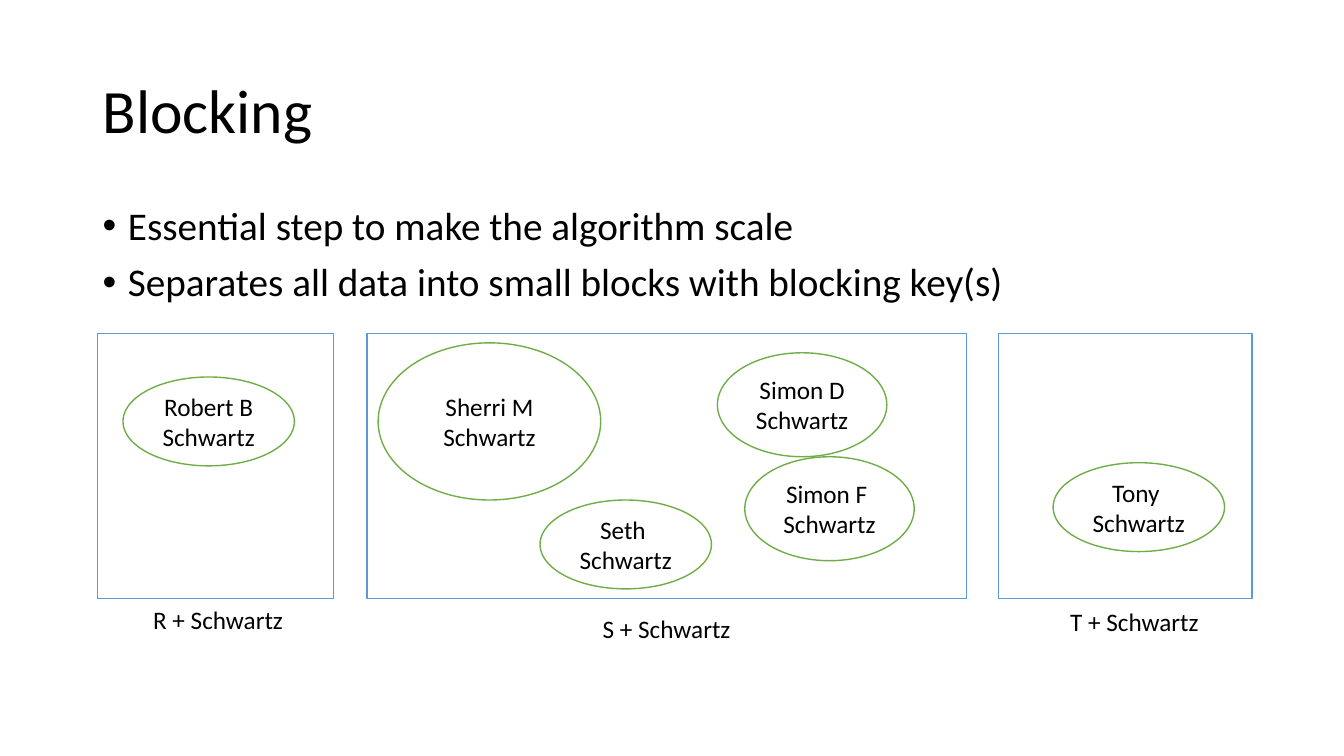
from lxml import etree
from pptx import Presentation
from pptx import util as u
from pptx.dml.color import RGBColor
from pptx.enum import shapes, text
from pptx.oxml.ns import qn

BLACK, WHITE, BLUE, GREEN = "000000", "FFFFFF", "5B9BD5", "70AD47"
BLOCK_TOP, BLOCK_HEIGHT = 8.41, 6.68
SMALL, MEDIUM, LARGE = (4.32, 2.24), (4.27, 2.62), (5.61, 3.96)

# left, width, label text, label left, label top
BLOCKS = [
    (2.46, 5.94, "R + Schwartz", 3.61, 15.11),
    (9.25, 15.11, "S + Schwartz", 14.94, 15.34),
    (25.17, 6.38, "T + Schwartz", 26.72, 15.16),
]

# left, top, size, lines
RECORDS = [
    (9.53, 8.64, LARGE, ["Sherri M", "Schwartz"]),
    (18.08, 8.89, MEDIUM, ["Simon D Schwartz"]),
    (13.61, 12.6, SMALL, ["Seth ", "Schwartz"]),
    (18.77, 11.51, MEDIUM, ["Simon F ", "Schwartz"]),
    (3.1, 9.5, SMALL, ["Robert B Schwartz"]),
    (26.54, 11.66, SMALL, ["Tony ", "Schwartz"]),
]


def colour(value):
    return RGBColor.from_string(value)


def add_bullet(para):
    properties = para._p.get_or_add_pPr()
    properties.set("marL", str(u.Cm(0.635)))
    properties.set("indent", str(-u.Cm(0.635)))
    etree.SubElement(properties, qn("a:buFont"), typeface="Arial")
    etree.SubElement(properties, qn("a:buChar"), char="•")


def write(box, lines, size=18, align=text.PP_ALIGN.LEFT,
          anchor=text.MSO_ANCHOR.TOP, spacing=1.0, before=0, bullet=False):
    """Fill a shape with one paragraph for each line."""
    frame = box.text_frame
    frame.word_wrap = True
    frame.vertical_anchor = anchor
    for index, line in enumerate(lines):
        para = frame.paragraphs[0] if index == 0 else frame.add_paragraph()
        para.alignment = align
        para.line_spacing = spacing
        para.space_before = u.Pt(before)
        if bullet:
            add_bullet(para)
        span = para.add_run()
        span.text = line
        span.font.name = "Calibri"
        span.font.size = u.Pt(size)
        span.font.color.rgb = colour(BLACK)


def add_text(slide, left, top, width, height, lines, **style):
    box = slide.shapes.add_textbox(u.Cm(left), u.Cm(top), u.Cm(width), u.Cm(height))
    write(box, lines, **style)


def add_outline(slide, kind, left, top, width, height, line):
    shape = slide.shapes.add_shape(
        kind, u.Cm(left), u.Cm(top), u.Cm(width), u.Cm(height))
    shape.shadow.inherit = False
    shape.fill.solid()
    shape.fill.fore_color.rgb = colour(WHITE)
    shape.line.color.rgb = colour(line)
    shape.line.width = u.Pt(1)
    return shape


def add_block(slide, left, width, label, label_left, label_top):
    add_outline(slide, shapes.MSO_SHAPE.RECTANGLE,
                left, BLOCK_TOP, width, BLOCK_HEIGHT, BLUE)
    add_text(slide, label_left, label_top, 4.72, 1.02, [label])


def add_record(slide, left, top, size, lines):
    oval = add_outline(slide, shapes.MSO_SHAPE.OVAL, left, top, *size, GREEN)
    write(oval, lines, align=text.PP_ALIGN.CENTER, anchor=text.MSO_ANCHOR.MIDDLE)


def main():
    deck = Presentation()
    deck.slide_width, deck.slide_height = u.Cm(33.87), u.Cm(19.05)
    slide = deck.slides.add_slide(deck.slide_layouts[6])

    add_text(slide, 2.34, 1.02, 29.21, 3.68, ["Blocking"],
             size=44, anchor=text.MSO_ANCHOR.MIDDLE, spacing=0.9)
    add_text(slide, 2.34, 5.08, 29.21, 12.09,
             ["Essential step to make the algorithm scale",
              "Separates all data into small blocks with blocking key(s)"],
             size=28, spacing=0.9, before=10, bullet=True)
    for block in BLOCKS:
        add_block(slide, *block)
    for record in RECORDS:
        add_record(slide, *record)

    deck.save("out.pptx")


if __name__ == "__main__":
    main()
